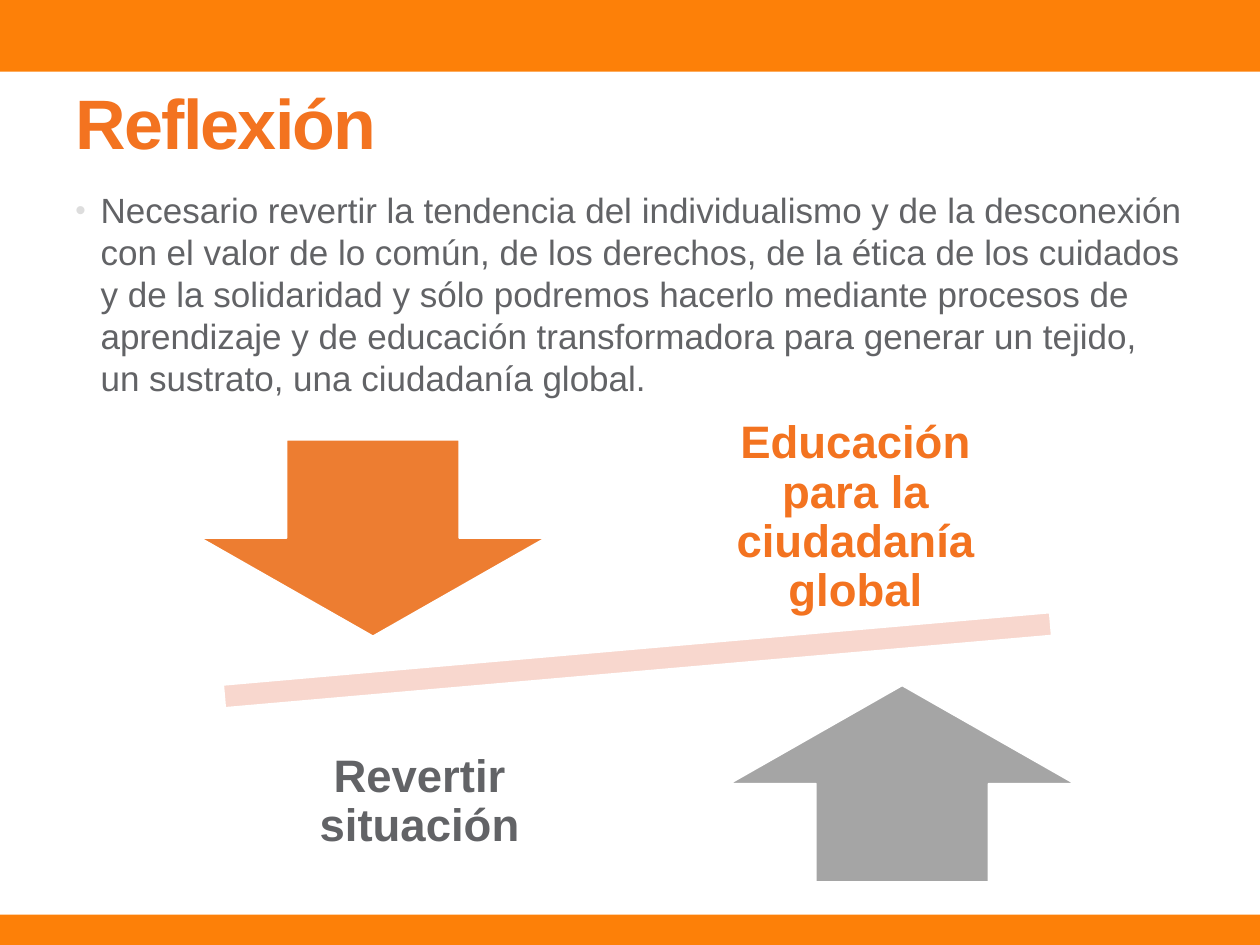
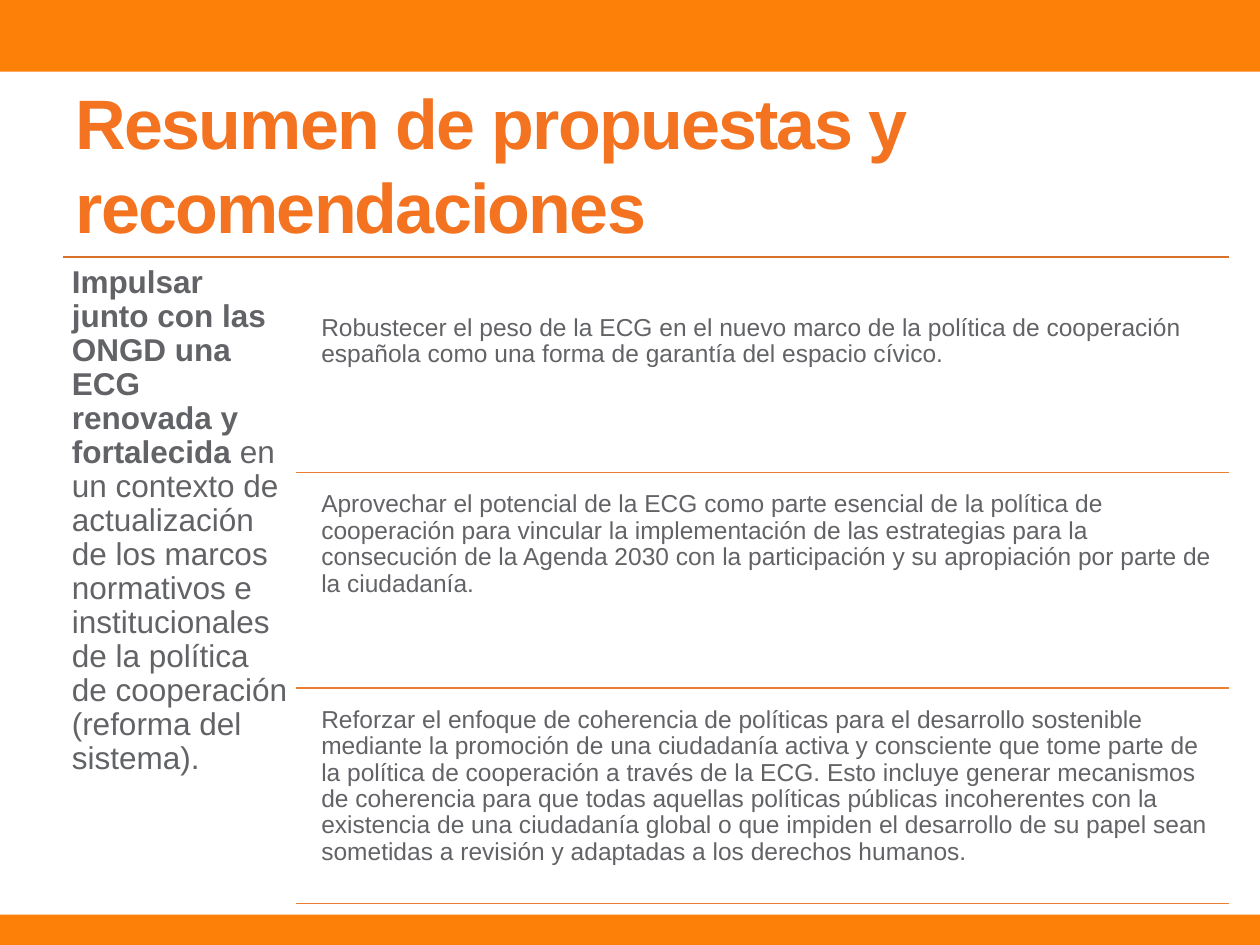
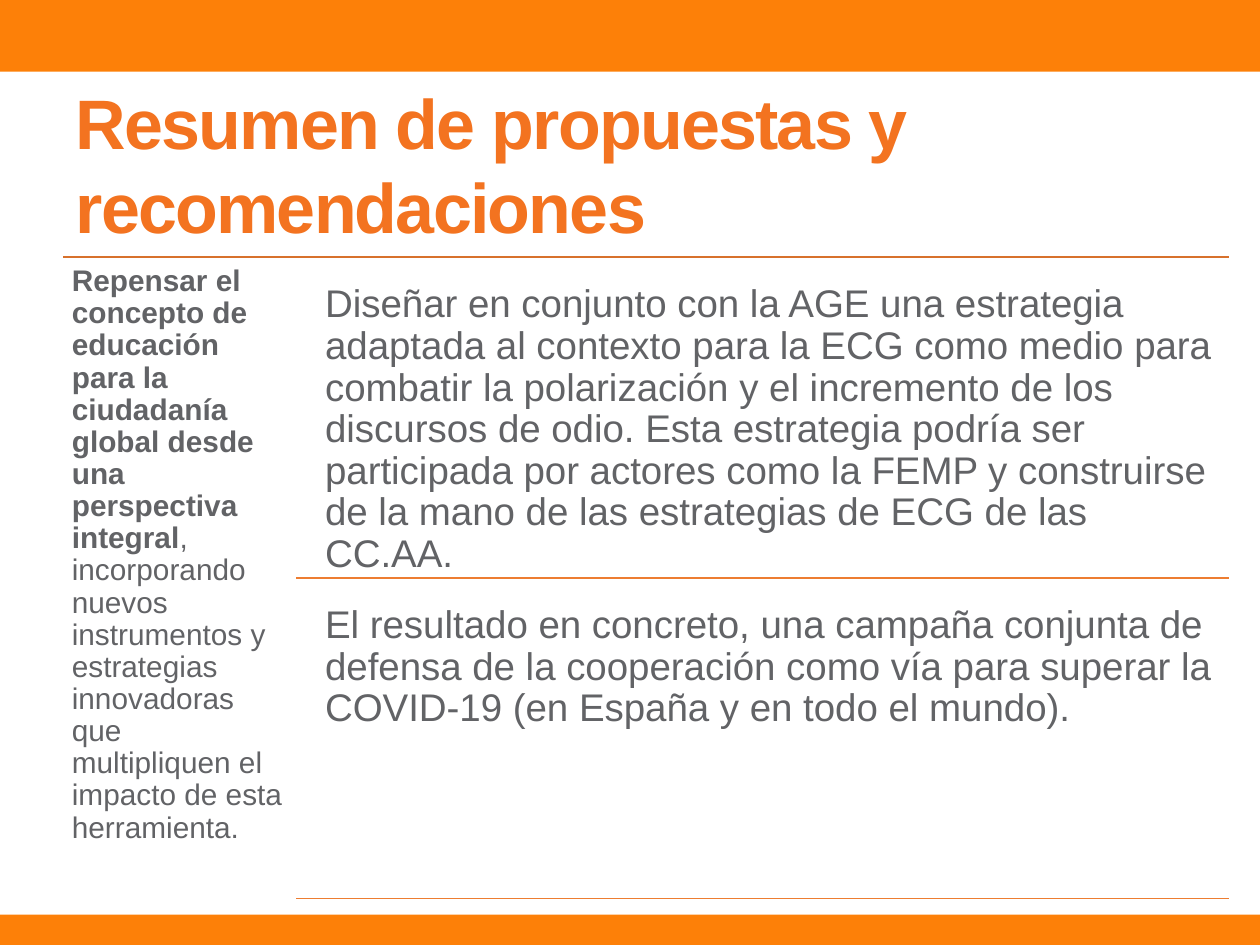
from dataclasses import dataclass

from lxml.etree import SubElement
from pptx import Presentation
from pptx.dml.color import RGBColor
from pptx.enum.shapes import MSO_CONNECTOR, MSO_SHAPE
from pptx.enum.text import MSO_ANCHOR, MSO_AUTO_SIZE, PP_ALIGN
from pptx.oxml.ns import qn
from pptx.util import Inches, Pt

COLUMNS, ROWS = 20, 15
TITLE_ONLY = 5


@dataclass(frozen=True)
class Theme:
    font: str = "Arial"
    band: str = "FD8008"
    accent: str = "F37320"
    body: str = "626366"
    bullet: str = "DDDDDD"
    white: str = "FFFFFF"
    beam: str = "F8D7CE"
    down: str = "ED7D31"
    up: str = "A5A5A5"
    top_rule: str = "D7712C"
    row_rule: str = "ED7D31"
    title_size: int = 40
    label_size: int = 26
    body_size: int = 20


class Deck:
    """Holds the theme and the current slide; lengths are grid columns and rows."""

    def __init__(self, theme):
        self.theme = theme
        self.presentation = Presentation()
        self.presentation.slide_width = Inches(10)
        self.presentation.slide_height = Inches(7.5)
        self.column = self.presentation.slide_width / COLUMNS
        self.row = self.presentation.slide_height / ROWS
        self.slide = None

    def place(self, left, top, width, height):
        return (round(left * self.column), round(top * self.row),
                round(width * self.column), round(height * self.row))

    def style(self, font, size, color, bold=None):
        font.name = self.theme.font
        font.size = Pt(size)
        font.color.rgb = RGBColor.from_string(color)
        font.bold = bold

    def new_slide(self, heading):
        layout = self.presentation.slide_layouts[TITLE_ONLY]
        self.slide = self.presentation.slides.add_slide(layout)
        # Bands at the top and the bottom
        for top, height in ((0, 1.14), (14.52, 0.48)):
            self.shape(MSO_SHAPE.RECTANGLE, (0, top, COLUMNS, height), self.theme.band)
        self.title(heading)

    def title(self, heading):
        title = self.slide.shapes.title
        title.left, title.top, title.width, title.height = self.place(1, 1.16, 18, 2.16)
        frame = title.text_frame
        frame.text = heading
        frame.auto_size = MSO_AUTO_SIZE.NONE
        frame.vertical_anchor = MSO_ANCHOR.TOP
        paragraph = frame.paragraphs[0]
        paragraph.alignment = PP_ALIGN.LEFT
        self.style(paragraph.font, self.theme.title_size, self.theme.accent, True)
        paragraph.runs[0].font._element.set("spc", "-100")

    def shape(self, preset, box, fill, outline=None, rotation=0):
        shape = self.slide.shapes.add_shape(preset, *self.place(*box))
        shape.shadow.inherit = False
        shape.rotation = rotation
        shape.fill.solid()
        shape.fill.fore_color.rgb = RGBColor.from_string(fill)
        if outline:
            shape.line.color.rgb = RGBColor.from_string(outline)
            shape.line.width = Pt(1)
        else:
            shape.line.fill.background()

    def rule(self, left, right, top, color):
        x1, y, x2, _ = self.place(left, top, right, 0)
        rule = self.slide.shapes.add_connector(MSO_CONNECTOR.STRAIGHT, x1, y, x2, y)
        rule.line.color.rgb = RGBColor.from_string(color)
        rule.line.width = Pt(1)
        SubElement(rule._element.spPr, qn("a:effectLst"))

    def text(self, box, words, size, color=None, bold=None, inset=None,
             spacing=None, align=None, anchor=MSO_ANCHOR.TOP, bullet=False):
        """Words are one string, or a pair of a bold lead and its plain rest."""
        frame = self.slide.shapes.add_textbox(*self.place(*box)).text_frame
        frame.word_wrap = True
        frame.vertical_anchor = anchor
        if inset is not None:
            frame.margin_left = frame.margin_right = Inches(inset)
            frame.margin_top = frame.margin_bottom = Inches(inset)
        paragraph = frame.paragraphs[0]
        paragraph.alignment = align
        paragraph.line_spacing = spacing
        if bullet:
            self.add_bullet(paragraph)
        self.style(paragraph.font, size, color or self.theme.body, bold)
        if isinstance(words, str):
            paragraph.add_run().text = words
        else:
            for part, is_bold in zip(words, (True, False)):
                run = paragraph.add_run()
                run.text = part
                run.font.bold = is_bold

    def add_bullet(self, paragraph):
        properties = paragraph._p.get_or_add_pPr()
        properties.set("marL", str(Inches(0.2)))
        properties.set("indent", str(-Inches(0.2)))
        color = SubElement(properties, qn("a:buClr"))
        SubElement(color, qn("a:srgbClr"), val=self.theme.bullet)
        SubElement(properties, qn("a:buSzPct"), val="85000")
        SubElement(properties, qn("a:buFont"), typeface=self.theme.font)
        SubElement(properties, qn("a:buChar"), char="•")

    def label(self, box, words, color):
        self.text(box, words, self.theme.label_size, color, True, inset=0.2,
                  spacing=0.9, align=PP_ALIGN.CENTER, anchor=MSO_ANCHOR.MIDDLE)

    def proposal(self, aim, aim_size, measures, size, pitch, gap, inset, first_drop=0):
        """An aim on the left and its measures, each closed by a rule, on the right."""
        top, right = 4.08, 19.5
        self.rule(1, right, top, self.theme.top_rule)
        self.text((1, top, 3.7, 10.42), aim, aim_size, inset=0.07, spacing=0.9)
        for index, measure in enumerate(measures):
            start = top + index * pitch
            drop = gap + (first_drop if index == 0 else 0)
            self.text((4.98, start + drop, 14.52, pitch - drop), measure, size,
                      inset=inset, spacing=0.9)
            self.rule(4.7, right, start + pitch, self.theme.row_rule)


def reflection(deck):
    theme = deck.theme
    deck.new_slide("Reflexión")
    deck.text((1, 2.9, 18, 10.72),
              "Necesario revertir la tendencia del individualismo y de la desconexión con el "
              "valor de lo común, de los derechos, de la ética de los cuidados y de la "
              "solidaridad y sólo podremos hacerlo mediante procesos de aprendizaje y de "
              "educación transformadora para generar un tejido, un sustrato, una ciudadanía "
              "global.", theme.body_size, bullet=True)
    # Balance: tilted beam, opposed arrows and their labels
    deck.shape(MSO_SHAPE.MATH_MINUS, (1.16, 9.7, 17.92, 1.56), theme.beam, theme.white, 355)
    deck.shape(MSO_SHAPE.DOWN_ARROW, (3.18, 6.98, 5.48, 3.12), theme.down, theme.white)
    deck.label((10.66, 6.58, 5.84, 3.28), "Educación para la ciudadanía global", theme.accent)
    deck.shape(MSO_SHAPE.UP_ARROW, (11.58, 10.88, 5.48, 3.12), theme.up, theme.white)
    deck.label((3.74, 11.1, 5.84, 3.28), "Revertir situación", theme.body)


def proposals(deck):
    heading = "Resumen de propuestas y recomendaciones"
    # Renewed education for global citizenship
    deck.new_slide(heading)
    deck.proposal(
        ("Impulsar junto con las ONGD una ECG renovada y fortalecida ",
         "en un contexto de actualización de los marcos normativos e institucionales de la "
         "política de cooperación (reforma del sistema)."), 18,
        ("Robustecer el peso de la ECG en el nuevo marco de la política de cooperación "
         "española como una forma de garantía del espacio cívico.",
         "Aprovechar el potencial de la ECG como parte esencial de la política de cooperación "
         "para vincular la implementación de las estrategias para la consecución de la Agenda "
         "2030 con la participación y su apropiación por parte de la ciudadanía.",
         "Reforzar el enfoque de coherencia de políticas para el desarrollo sostenible mediante "
         "la promoción de una ciudadanía activa y consciente que tome parte de la política de "
         "cooperación a través de la ECG. Esto incluye generar mecanismos de coherencia para que "
         "todas aquellas políticas públicas incoherentes con la existencia de una ciudadanía "
         "global o que impiden el desarrollo de su papel sean sometidas a revisión y adaptadas a "
         "los derechos humanos."),
        size=14, pitch=3.42, gap=0.18, inset=0.06, first_drop=0.62)
    # Comprehensive approach
    deck.new_slide(heading)
    deck.proposal(
        ("Repensar el concepto de educación para la ciudadanía global desde una perspectiva "
         "integral",
         ", incorporando nuevos instrumentos y estrategias innovadoras que multipliquen el "
         "impacto de esta herramienta."), 17,
        ("Diseñar en conjunto con la AGE una estrategia adaptada al contexto para la ECG como "
         "medio para combatir la polarización y el incremento de los discursos de odio. Esta "
         "estrategia podría ser participada por actores como la FEMP y construirse de la mano de "
         "las estrategias de ECG de las CC.AA.",
         "El resultado en concreto, una campaña conjunta de defensa de la cooperación como vía "
         "para superar la COVID-19 (en España y en todo el mundo)."),
        size=22, pitch=5.09, gap=0.26, inset=0.09)


def main():
    deck = Deck(Theme())
    reflection(deck)
    proposals(deck)
    deck.presentation.save("out.pptx")


if __name__ == "__main__":
    main()
